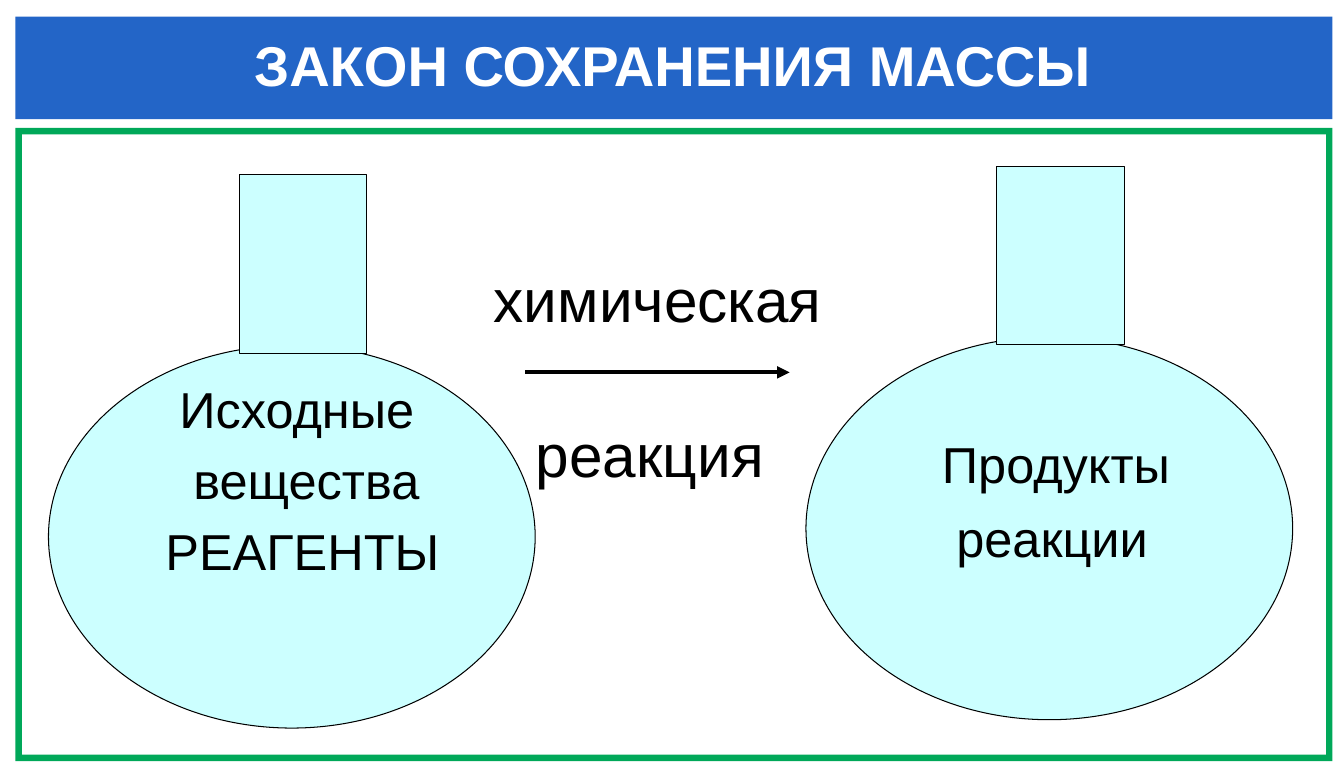
import pptx
import pptx.dml.color
import pptx.enum.shapes
import pptx.enum.text
import pptx.oxml.ns
import pptx.util
from dataclasses import dataclass
from lxml import etree

Cm = pptx.util.Cm
Pt = pptx.util.Pt
RGB = pptx.dml.color.RGBColor
SHAPE = pptx.enum.shapes.MSO_SHAPE
ALIGN = pptx.enum.text.PP_ALIGN
ANCHOR = pptx.enum.text.MSO_ANCHOR
qn = pptx.oxml.ns.qn


@dataclass(frozen=True)
class Theme:
    banner: RGB = RGB(0x23, 0x65, 0xC7)
    frame: RGB = RGB(0x00, 0xA8, 0x59)
    glass: RGB = RGB(0xCC, 0xFF, 0xFF)
    ink: RGB = RGB(0, 0, 0)
    light: RGB = RGB(0xFF, 0xFF, 0xFF)
    font: str = "Arial"
    title_size: float = 40
    arrow_size: float = 43
    flask_size: float = 36
    outline: float = 0.75
    arrow_width: float = 3


THEME = Theme()


def apply(target, values):
    for name, value in values.items():
        setattr(target, name, value)


def place(shape, left, top, width, height):
    apply(shape, {"left": Cm(left), "top": Cm(top),
                  "width": Cm(width), "height": Cm(height)})


def add_block(shapes, kind, box, fill, outline=None):
    block = shapes.add_shape(kind, *map(Cm, box))
    block.shadow.inherit = False
    block.fill.solid()
    block.fill.fore_color.rgb = fill
    if outline is None:
        block.line.fill.background()
    else:
        block.line.color.rgb = outline
        block.line.width = Pt(THEME.outline)
    return block


def add_flask(slide, left, top):
    """A round bulb with a neck, kept together as one group."""
    flask = slide.shapes.add_group_shape()
    bulb = (left, top, 12.24, 9.63)
    neck = (left + 4.8, top - 4.3, 3.2, 4.5)
    for kind, box in ((SHAPE.OVAL, bulb), (SHAPE.RECTANGLE, neck)):
        add_block(flask.shapes, kind, box, THEME.glass, THEME.ink)


def write(frame, lines, size, color, bold=False, align=ALIGN.LEFT):
    frame.text = "\n".join(lines)
    for paragraph in frame.paragraphs:
        paragraph.alignment = align
        apply(paragraph.font, {"name": THEME.font, "size": Pt(size), "bold": bold})
        paragraph.font.color.rgb = color


def add_label(slide, text, box, size):
    label = slide.shapes.add_textbox(*map(Cm, box)).text_frame
    apply(label, {"word_wrap": True, "margin_left": Cm(0.3), "margin_right": Cm(0.3),
                  "margin_top": Cm(0.15), "margin_bottom": Cm(0.15)})
    write(label, [text], size, THEME.ink)


def add_arrow(slide, start, end, height):
    arrow = slide.shapes.add_connector(
        pptx.enum.shapes.MSO_CONNECTOR.STRAIGHT,
        Cm(start), Cm(height), Cm(end), Cm(height))
    arrow.line.color.rgb = THEME.ink
    arrow.line.width = Pt(THEME.arrow_width)
    etree.SubElement(arrow.line._get_or_add_ln(), qn("a:tailEnd"), type="triangle")
    etree.SubElement(arrow.element.spPr, qn("a:effectLst"))


def fill_title(slide, text):
    title = slide.shapes.title
    place(title, 0.64, 0.62, 32.54, 1.96)
    apply(title.text_frame, {"vertical_anchor": ANCHOR.MIDDLE, "word_wrap": True})
    write(title.text_frame, [text], THEME.title_size, THEME.light, True, ALIGN.CENTER)
    slide.shapes.element.append(title.element)


def fill_reagents(slide, lines):
    """Lines are pairs of a text and its left indent in centimetres."""
    reagents = slide.placeholders[1]
    place(reagents, 4.16, 9.52, 9.1, 8)
    apply(reagents.text_frame, {
        "margin_left": 0, "margin_top": 0, "margin_right": 0, "margin_bottom": 0,
        "vertical_anchor": ANCHOR.TOP, "word_wrap": True,
        "auto_size": pptx.enum.text.MSO_AUTO_SIZE.NONE})
    write(reagents.text_frame, [text for text, _ in lines], THEME.flask_size, THEME.ink)
    for paragraph, (_, indent) in zip(reagents.text_frame.paragraphs, lines):
        paragraph.space_before = Pt(7.2)
        properties = paragraph._p.get_or_add_pPr()
        properties.set("marL", str(Cm(indent)))
        properties.set("indent", "0")
        etree.SubElement(properties, qn("a:buNone"))
        # Bullet settings come before the default run properties
        properties.append(properties.find(qn("a:defRPr")))
    slide.shapes.element.append(reagents.element)


def main():
    deck = pptx.Presentation()
    deck.slide_width, deck.slide_height = Cm(33.8), Cm(19.5)
    slide = deck.slides.add_slide(deck.slide_layouts[1])

    # Frame and title banner
    border = add_block(slide.shapes, SHAPE.FRAME, (0.39, 3.22, 33.12, 15.93), THEME.frame)
    border.adjustments[0] = 0.01
    add_block(slide.shapes, SHAPE.RECTANGLE, (0.39, 0.42, 33.12, 2.58), THEME.banner)
    fill_title(slide, "ЗАКОН СОХРАНЕНИЯ МАССЫ")

    # Flasks: products on the right, reagents on the left
    add_flask(slide, 20.27, 8.48)
    add_flask(slide, 1.22, 8.69)
    fill_reagents(slide, [("Исходные", 0.35), ("вещества", 0.7), ("РЕАГЕНТЫ", 0)])
    add_label(slide, "Продукты", (23.39, 10.74, 6.6, 1.85), THEME.flask_size)
    add_label(slide, "реакции", (23.75, 12.6, 5.7, 1.85), THEME.flask_size)

    # Reaction arrow
    add_arrow(slide, 13.21, 19.86, 9.37)
    add_label(slide, "химическая", (12.12, 6.46, 9.2, 2.13), THEME.arrow_size)
    add_label(slide, "реакция", (13.18, 10.36, 7.19, 2.13), THEME.arrow_size)

    deck.save("out.pptx")


if __name__ == "__main__":
    main()
